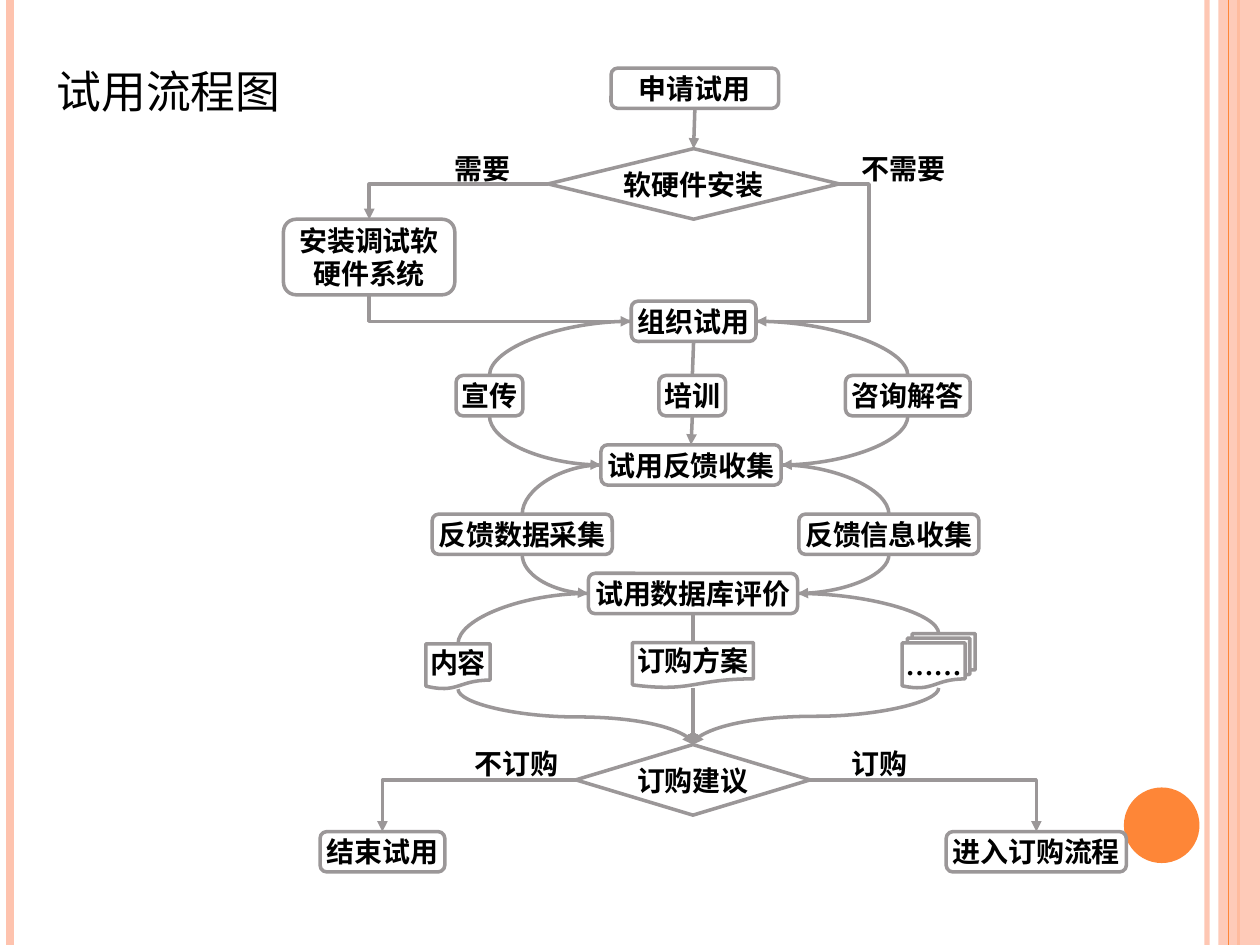
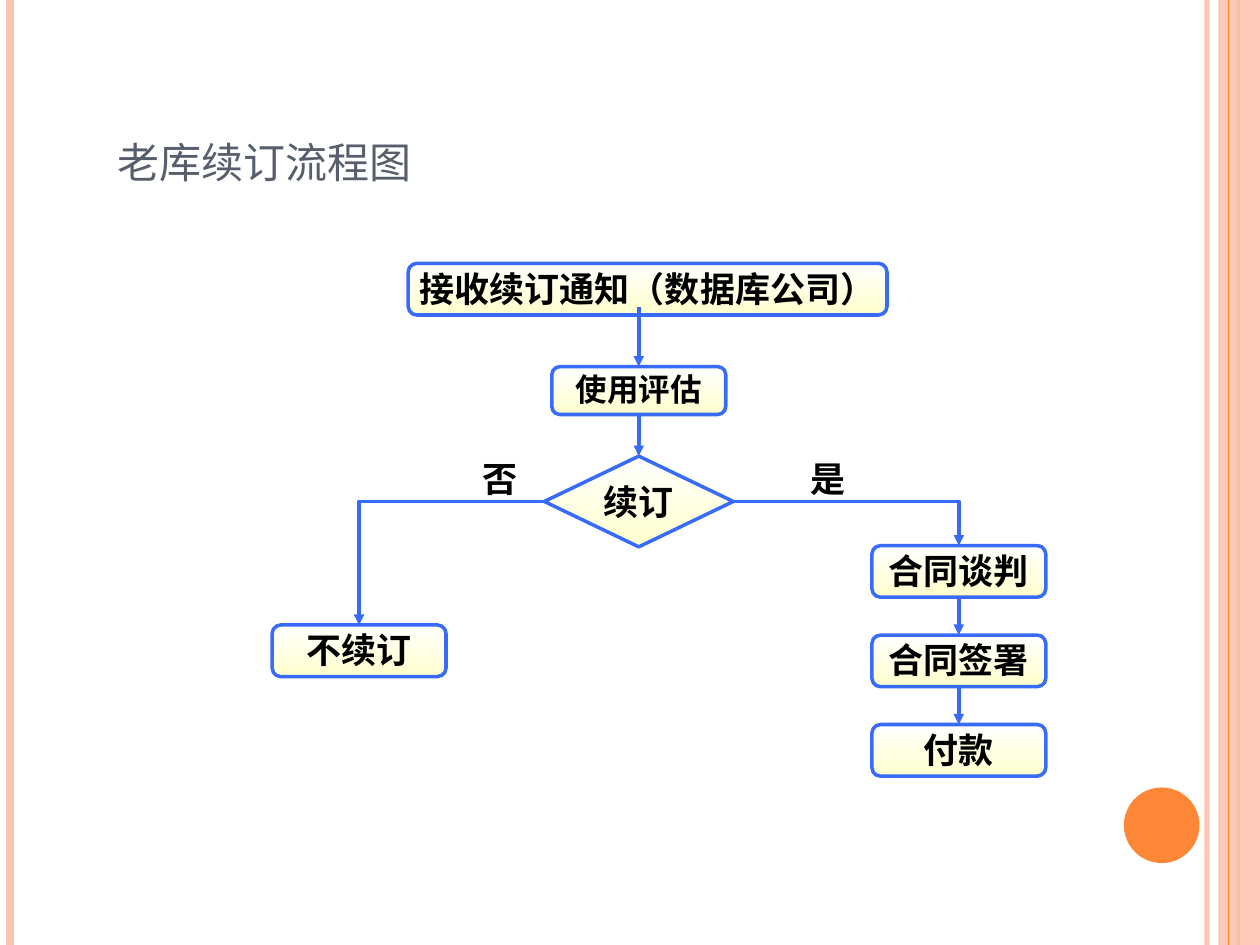
from dataclasses import dataclass

from lxml.etree import SubElement
from pptx import Presentation
from pptx.dml.color import RGBColor
from pptx.enum.shapes import MSO_CONNECTOR, MSO_SHAPE
from pptx.enum.text import MSO_ANCHOR, MSO_AUTO_SIZE, PP_ALIGN
from pptx.oxml.ns import qn
from pptx.util import Inches, Pt

PEACH, ORANGE = "FEC3AE", "FE8637"
BLACK, SLATE = "000000", "575F6D"
LATO, TIMES, TITLE_FONT = "Lato", "Times New Roman", "TeX Gyre Schola"
TOP, LEFT, BOTTOM, RIGHT = range(4)
PROCESS = MSO_SHAPE.FLOWCHART_ALTERNATE_PROCESS
DECISION = MSO_SHAPE.FLOWCHART_DECISION
DOCUMENT = MSO_SHAPE.FLOWCHART_DOCUMENT
MULTIDOCUMENT = MSO_SHAPE.FLOWCHART_MULTIDOCUMENT


@dataclass
class FlowStyle:
    line: str
    font: str
    size: int
    inset: float
    anchor: MSO_ANCHOR
    gradient: tuple = ()


TRIAL = FlowStyle("9B9798", LATO, 16, 0, MSO_ANCHOR.MIDDLE)
RENEWAL = FlowStyle("396BF9", TIMES, 20, 0.01, MSO_ANCHOR.TOP, ("FFFFFF", "FFFFCC"))


def rgb(value):
    return RGBColor.from_string(value)


def format_text(frame, font, size, color, bold=None, align=None):
    for para in frame.paragraphs:
        para.alignment = align
        for span in para.runs:
            span.font.name = font
            span.font.size = Pt(size)
            span.font.bold = bold
            span.font.color.rgb = rgb(color)


def set_opacity(shape, percent):
    for color in shape._element.spPr.iter(qn("a:srgbClr")):
        SubElement(color, qn("a:alpha")).set("val", str(percent * 1000))


def add_line(page, kind, start, end, color, width, arrow=False):
    line = page.shapes.add_connector(kind, *start, *end)
    line.line.color.rgb = rgb(color)
    line.line.width = Pt(width)
    properties = line._element.spPr
    if arrow:
        SubElement(properties.find(qn("a:ln")), qn("a:tailEnd")).set("type", "triangle")
    SubElement(properties, qn("a:effectLst"))
    return line


def add_decoration(page, kind, left, top, width, height, color):
    shape = page.shapes.add_shape(
        kind, Inches(left), Inches(top), Inches(width), Inches(height))
    shape.shadow.inherit = False
    shape.fill.solid()
    shape.fill.fore_color.rgb = rgb(color)
    shape.line.fill.background()
    return shape


def add_bands(page, layout):
    """Draw the side bands and the disc, and hand them to the layout."""
    def stripe(x, color, width):
        return add_line(page, MSO_CONNECTOR.STRAIGHT, (Inches(x), 0),
                        (Inches(x), Inches(7.5)), color, width)

    inner = stripe(9.58, PEACH, 3)
    set_opacity(inner, 93)
    outer = stripe(0.08, PEACH, 4.5)
    edge = stripe(9.83, ORANGE, 1.5)
    band = add_decoration(page, MSO_SHAPE.RECTANGLE, 9.67, 0, 0.33, 7.5, PEACH)
    set_opacity(band, 87)
    hairline = stripe(9.75, ORANGE, 0.75)
    disc = add_decoration(page, MSO_SHAPE.OVAL, 8.92, 6.25, 0.6, 0.6, ORANGE)
    for part in (inner, outer, edge, band, hairline, disc):
        layout.shapes._spTree.append(part._element)


def set_title(page, text, left, top, width, height, size, color):
    title = page.shapes.title
    title.left, title.top = Inches(left), Inches(top)
    title.width, title.height = Inches(width), Inches(height)
    frame = title.text_frame
    frame.text = text
    frame.auto_size = MSO_AUTO_SIZE.NONE
    frame.vertical_anchor = MSO_ANCHOR.BOTTOM
    format_text(frame, TITLE_FONT, size, color, align=PP_ALIGN.LEFT)
    for span in frame.paragraphs[0].runs:
        span.font._element.set("cap", "small")


def set_insets(frame, inset):
    frame.margin_left = frame.margin_right = Inches(0.02)
    frame.margin_top = frame.margin_bottom = Inches(inset)


def add_step(page, style, text, left, top, width, height,
             kind=PROCESS, wrap=True, font=None, size=None):
    box = page.shapes.add_shape(
        kind, Inches(left), Inches(top), Inches(width), Inches(height))
    box.shadow.inherit = False
    if style.gradient:
        box.fill.gradient()
        box.fill.gradient_angle = 270
        for stop, color, position in zip(box.fill.gradient_stops, style.gradient, (0, 1)):
            stop.color.rgb = rgb(color)
            stop.position = position
    else:
        box.fill.background()
    box.line.color.rgb = rgb(style.line)
    box.line.width = Pt(2)
    frame = box.text_frame
    frame.text = text
    frame.word_wrap = wrap
    frame.auto_size = MSO_AUTO_SIZE.SHAPE_TO_FIT_TEXT
    frame.vertical_anchor = style.anchor
    set_insets(frame, style.inset)
    format_text(frame, font or style.font, size or style.size, BLACK, True, PP_ALIGN.CENTER)
    return box


def add_label(page, style, text, left, top, width, height, tight=False):
    box = page.shapes.add_textbox(
        Inches(left), Inches(top), Inches(width), Inches(height))
    frame = box.text_frame
    frame.text = text
    frame.word_wrap = True
    frame.auto_size = MSO_AUTO_SIZE.SHAPE_TO_FIT_TEXT
    if tight:
        set_insets(frame, style.inset)
    format_text(frame, style.font, style.size, BLACK, True,
                PP_ALIGN.CENTER if tight else PP_ALIGN.LEFT)


def side_middle(box, side):
    x = box.left + {LEFT: 0, RIGHT: box.width}.get(side, box.width // 2)
    y = box.top + {TOP: 0, BOTTOM: box.height}.get(side, box.height // 2)
    return x, y


def join_down(page, style, upper, lower, arrow=True):
    line = add_line(page, MSO_CONNECTOR.STRAIGHT, side_middle(upper, BOTTOM),
                    side_middle(lower, TOP), style.line, 2, arrow)
    line.begin_connect(upper, BOTTOM)
    line.end_connect(lower, TOP)


def route(page, style, name, start, start_side, end, end_side, arrow=True, bend=None):
    """Lead a "bent" or "curved" connector down from one box side to another."""
    x1, y1 = side_middle(start, start_side)
    x2, y2 = side_middle(end, end_side)
    kind = MSO_CONNECTOR.ELBOW if name == "bent" else MSO_CONNECTOR.CURVE
    line = add_line(page, kind, (x1, y1), (x2, y2), style.line, 2, arrow)
    leaves_down = start_side == BOTTOM
    bends = 3 if start_side % 2 == end_side % 2 else 2
    geometry = line._element.spPr.find(qn("a:prstGeom"))
    geometry.set("prst", f"{name}Connector{bends}")
    if bend is not None:
        guide = SubElement(geometry.find(qn("a:avLst")), qn("a:gd"))
        guide.set("name", "adj1")
        guide.set("fmla", f"val {round(bend * 100000)}")

    frame = line._element.spPr.find(qn("a:xfrm"))
    if leaves_down:
        across, down = abs(x2 - x1), y2 - y1
        line.left, line.top = (x1 + x2 - down) // 2, (y1 + y2 - across) // 2
        line.width, line.height = down, across
        frame.attrib.pop("flipH", None)
        line.rotation = 270 if x2 > x1 else 90
        if x2 > x1:
            frame.set("flipH", "1")
    elif x2 < x1 and bends == 2:
        frame.attrib.pop("flipH", None)
        frame.set("flipV", "1")
        line.rotation = 180


def draw_trial_flow(page):
    set_title(page, "试用流程图", 0.35, 0.21, 3.05, 0.79, 32, BLACK)

    def step(text, left, top, width, height=0.32, **options):
        return add_step(page, TRIAL, text, left, top, width, height,
                        **{"wrap": False, **options})

    def curve(*ends, arrow=True):
        route(page, TRIAL, "curved", *ends, arrow=arrow)

    def bent(*ends, bend=None):
        route(page, TRIAL, "bent", *ends, bend=bend)

    apply = step("申请试用", 4.85, 0.54, 1.33, wrap=True)
    installation = step("软硬件安装", 4.35, 1.18, 2.31, 0.56, kind=DECISION)
    setup = step("安装调试软硬件系统", 2.25, 1.74, 1.36, 0.6, wrap=True)
    organise = step("组织试用", 5.01, 2.39, 0.99)
    promotion = step("宣传", 3.62, 2.98, 0.53)
    training = step("培训", 5.23, 2.98, 0.53)
    advice = step("咨询解答", 6.71, 2.98, 0.99)
    feedback = step("试用反馈收集", 4.77, 3.53, 1.43)
    data = step("反馈数据采集", 3.43, 4.08, 1.43)
    information = step("反馈信息收集", 6.34, 4.08, 1.43)
    evaluation = step("试用数据库评价", 4.67, 4.55, 1.66)
    content = step("内容", 3.38, 5.11, 0.51, 0.36, kind=DOCUMENT)
    plan = step("订购方案", 5.02, 5.1, 0.96, 0.36, kind=DOCUMENT)
    others = step("……", 7.16, 5.03, 0.58, 0.43, kind=MULTIDOCUMENT, font=TIMES)
    proposal = step("订购建议", 4.57, 5.91, 1.86, 0.56, kind=DECISION)
    finish = step("结束试用", 2.54, 6.6, 0.99)
    order = step("进入订购流程", 7.51, 6.6, 1.43)

    for upper, lower, arrow in (
            (apply, installation, True), (organise, training, False),
            (training, feedback, True), (evaluation, plan, False),
            (plan, proposal, True)):
        join_down(page, TRIAL, upper, lower, arrow)

    for source, left_box, right_box, target in (
            (organise, promotion, advice, feedback),
            (feedback, data, information, evaluation),
            (evaluation, content, others, proposal)):
        for side, branch in ((LEFT, left_box), (RIGHT, right_box)):
            curve(source, side, branch, TOP, arrow=False)
            curve(branch, BOTTOM, target, TOP if target is proposal else side)

    bent(installation, LEFT, setup, TOP)
    bent(setup, BOTTOM, organise, LEFT)
    bent(installation, RIGHT, organise, RIGHT, bend=-0.36)
    bent(proposal, LEFT, finish, TOP)
    bent(proposal, RIGHT, order, TOP)

    for text, left, top, width in (
            ("需要", 3.51, 1.15, 0.71), ("不需要", 6.74, 1.15, 1.02),
            ("不订购", 3.67, 5.88, 1.02), ("订购", 6.66, 5.88, 0.87)):
        add_label(page, TRIAL, text, left, top, width, 0.37)


def draw_renewal_flow(page):
    set_title(page, "老库续订流程图", 0.83, 0.3, 8.17, 1.25, 30, SLATE)

    def step(text, left, top, width=1.38, height=0.41, **options):
        return add_step(page, RENEWAL, text, left, top, width, height, **options)

    step("接收续订通知（数据库公司）", 3.24, 2.09, 3.8)
    assessment = step("使用评估", 4.38, 2.91, height=0.38, font=LATO, size=18)
    renewal = step("续订", 4.32, 3.62, 1.5, 0.72, kind=DECISION)
    negotiation, signing, payment = [
        step(text, 6.92, 4.33 + 0.71 * row)
        for row, text in enumerate(("合同谈判", "合同签署", "付款"))]
    decline = step("不续订", 2.16, 4.96)

    notice_line = add_line(page, MSO_CONNECTOR.STRAIGHT, (Inches(5.07), Inches(2.44)),
                           side_middle(assessment, TOP), RENEWAL.line, 2, True)
    notice_line.end_connect(assessment, TOP)
    for upper, lower in ((assessment, renewal), (negotiation, signing), (signing, payment)):
        join_down(page, RENEWAL, upper, lower)
    route(page, RENEWAL, "bent", renewal, RIGHT, negotiation, TOP)
    route(page, RENEWAL, "bent", renewal, LEFT, decline, TOP)
    for text, left in (("否", 3.81), ("是", 6.41)):
        add_label(page, RENEWAL, text, left, 3.62, 0.25, 0.36, tight=True)


def main():
    deck = Presentation()
    deck.slide_width, deck.slide_height = Inches(10), Inches(7.5)
    layout = deck.slide_layouts[5]
    trial_page = deck.slides.add_slide(layout)
    add_bands(trial_page, layout)
    draw_trial_flow(trial_page)
    draw_renewal_flow(deck.slides.add_slide(layout))
    deck.save("out.pptx")


if __name__ == "__main__":
    main()
